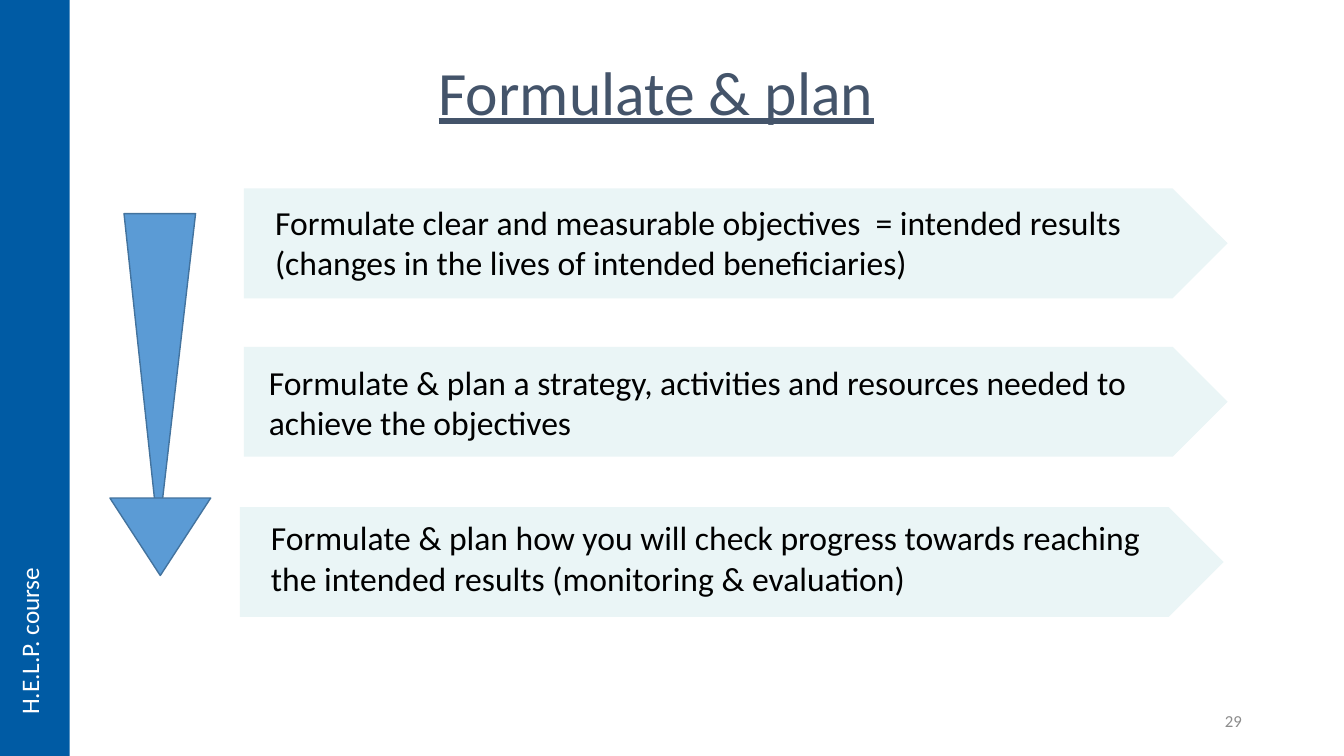
from pptx import Presentation
from pptx.dml.color import RGBColor
from pptx.enum.shapes import MSO_SHAPE
from pptx.enum.text import MSO_ANCHOR, PP_ALIGN
from pptx.util import Pt

RECTANGLE = MSO_SHAPE.RECTANGLE
TRIANGLE = MSO_SHAPE.ISOSCELES_TRIANGLE
PENTAGON = MSO_SHAPE.PENTAGON
MIDDLE = MSO_ANCHOR.MIDDLE
TOP = MSO_ANCHOR.TOP
LEFT, CENTER, RIGHT = PP_ALIGN.LEFT, PP_ALIGN.CENTER, PP_ALIGN.RIGHT

TITLE_LAYOUT = 5
SLIDE_WIDTH, SLIDE_HEIGHT = 960, 540
FONT = "Calibri"
BANNER_WIDTH, BANNER_HEIGHT = 702.7, 78.5

# Banner left and top, text left, top and width, wording
STEPS = [
    (174.2, 134.6, 189.4, 140.4, 642.2,
     "Formulate clear and measurable objectives  = intended results "
     "(changes in the lives of intended beneficiaries)"),
    (174.2, 247.7, 185, 254.9, 642.2,
     "Formulate & plan a strategy, activities and resources needed to "
     "achieve the objectives"),
    (171.4, 362.2, 186.5, 365.8, 655.2,
     "Formulate & plan how you will check progress towards reaching "
     "the intended results (monitoring & evaluation)"),
]


def color(value):
    return RGBColor.from_string(value)


def place(shape, left, top, width, height):
    shape.left, shape.top = Pt(left), Pt(top)
    shape.width, shape.height = Pt(width), Pt(height)


def write(shape, text, size, font_color, align=LEFT, anchor=TOP):
    frame = shape.text_frame
    frame.text = text
    frame.vertical_anchor = anchor
    paragraph = frame.paragraphs[0]
    paragraph.alignment = align
    font = paragraph.runs[0].font
    font.name = FONT
    font.size = Pt(size)
    font.color.rgb = color(font_color)
    return paragraph


def add_title(slide, text):
    title = slide.shapes.title
    place(title, 162.7, 23, 612, 90)
    paragraph = write(title, text, 44, "44546A", CENTER, MIDDLE)
    paragraph.line_spacing = 0.9
    paragraph.runs[0].font.underline = True


def add_block(slide, kind, box, fill, outline=None):
    shape = slide.shapes.add_shape(kind, *map(Pt, box))
    shape.shadow.inherit = False
    shape.fill.solid()
    shape.fill.fore_color.rgb = color(fill)
    if outline:
        shape.line.color.rgb = color(outline)
        shape.line.width = Pt(1)
    else:
        shape.line.fill.background()
    return shape


def add_text(slide, box, text, size, font_color, align=LEFT, anchor=TOP):
    shape = slide.shapes.add_textbox(*map(Pt, box))
    shape.text_frame.word_wrap = True
    write(shape, text, size, font_color, align, anchor)
    return shape


def add_down_triangle(slide, box, tip):
    triangle = add_block(slide, TRIANGLE, box, "5B9BD5", "43739E")
    triangle.adjustments[0] = tip
    triangle.rotation = 180


def add_step(slide, left, top, text_left, text_top, text_width, text):
    banner = add_block(slide, PENTAGON,
                       (left, top, BANNER_WIDTH, BANNER_HEIGHT), "EAF5F6")
    banner.adjustments[0] = 0.5
    add_text(slide, (text_left, text_top, text_width, 65.5),
             text, 24, "000000")


def add_sidebar(slide, text):
    add_block(slide, RECTANGLE, (0, 0, 49.7, SLIDE_HEIGHT), "005BA4")
    label = add_text(slide, (6.5, 403.9, 36, 113.8), text, 18, "FFFFFF")
    label.text_frame.word_wrap = False
    # Turn the label to read upwards
    label.element.txBody.bodyPr.set("vert", "vert270")


def main():
    presentation = Presentation()
    presentation.slide_width = Pt(SLIDE_WIDTH)
    presentation.slide_height = Pt(SLIDE_HEIGHT)
    slide = presentation.slides.add_slide(
        presentation.slide_layouts[TITLE_LAYOUT])

    add_title(slide, "Formulate & plan")

    # Downward arrow: shaft and head
    add_down_triangle(slide, (88.6, 152.6, 51.1, 229.7), 0.52)
    add_down_triangle(slide, (78.5, 355.7, 72, 55.4), 0.5)

    # Planning steps
    for step in STEPS:
        add_step(slide, *step)

    # Course label and page number
    add_sidebar(slide, "H.E.L.P. course")
    add_text(slide, (678.2, 500.4, 216, 28.8), "29", 12, "8C8C8C",
             RIGHT, MIDDLE)

    presentation.save("out.pptx")


if __name__ == "__main__":
    main()
